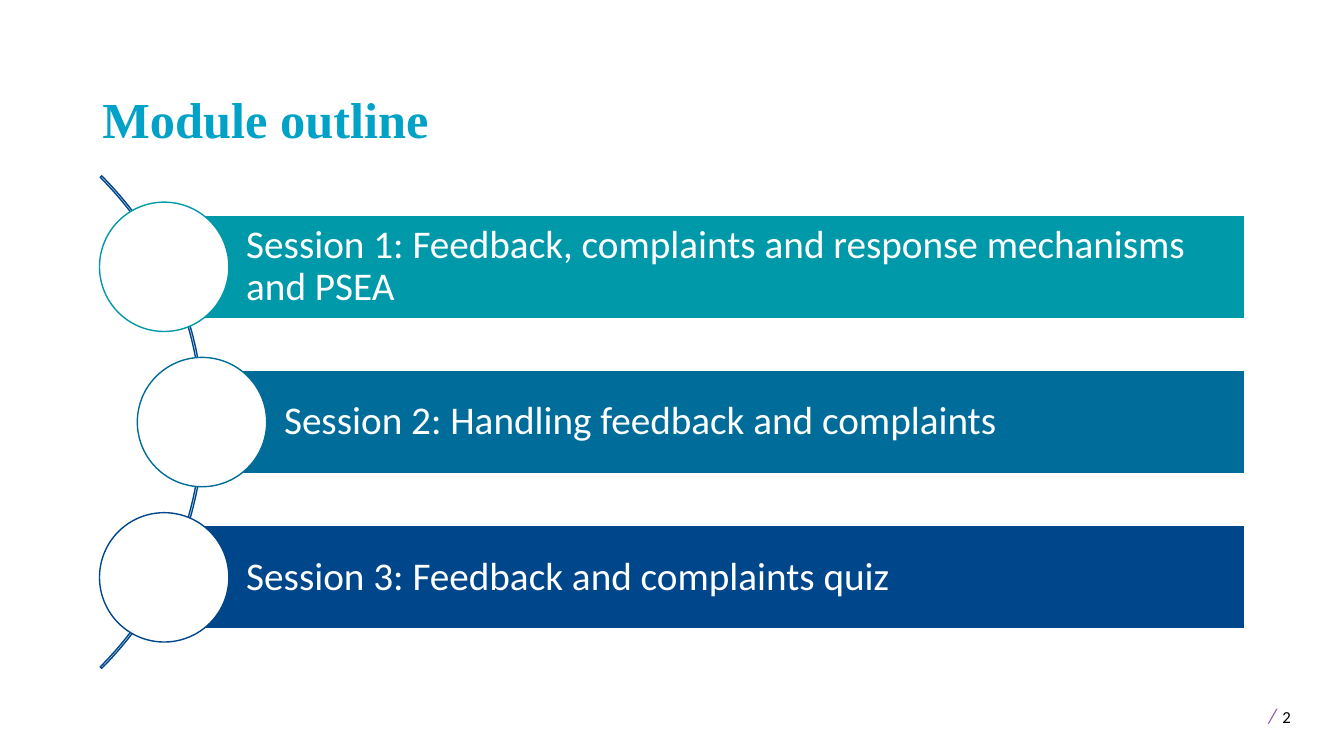
from pptx import Presentation
from pptx.dml.color import RGBColor
from pptx.enum.shapes import MSO_SHAPE as Preset
from pptx.enum.text import MSO_ANCHOR as Anchor, PP_ALIGN as Align
from pptx.util import Pt

SESSIONS = [
    ("Session 1: Feedback, complaints and response mechanisms and PSEA", "0099A9", 117.3),
    ("Session 2: Handling feedback and complaints", "006C9A", 144.3),
    ("Session 3: Feedback and complaints quiz", "00468B", 117.3),
]
MIDDLE_Y = 301.5
PITCH = 110.9
BAR_HEIGHT = 73.9
BAR_RIGHT = 888.8
CIRCLE_SIZE = 92.4
ARC_SIZE = 497.5


def colour(value):
    return RGBColor.from_string(value)


def add_shape(page, preset, left, top, width, height, line, fill=None):
    shape = page.shapes.add_shape(preset, Pt(left), Pt(top), Pt(width), Pt(height))
    shape.shadow.inherit = False
    if fill:
        shape.fill.solid()
        shape.fill.fore_color.rgb = colour(fill)
    else:
        shape.fill.background()
    shape.line.color.rgb = colour(line)
    shape.line.width = Pt(1)
    return shape


def add_span(para, text, size, hue, font="Calibri", bold=False, italic=False):
    span = para.add_run()
    span.text = text
    span.font.name = font
    span.font.size = Pt(size)
    span.font.bold = bold
    span.font.italic = italic
    span.font.color.rgb = colour(hue)


def set_frame(frame, anchor, left, other):
    frame.word_wrap = True
    frame.vertical_anchor = anchor
    frame.margin_left = Pt(left)
    frame.margin_top = frame.margin_right = frame.margin_bottom = Pt(other)


def add_title(page, text):
    title = page.shapes.title
    title.left, title.top, title.width, title.height = Pt(66), Pt(28.8), Pt(828), Pt(81.4)
    set_frame(title.text_frame, Anchor.BOTTOM, 7.2, 3.6)
    para = title.text_frame.paragraphs[0]
    para.alignment = Align.LEFT
    para.line_spacing = 0.9
    add_span(para, text, 36, "00A2C7", "Times New Roman", bold=True)


def add_arc(page):
    arc = add_shape(page, Preset.BLOCK_ARC, -352, MIDDLE_Y - ARC_SIZE / 2,
                    ARC_SIZE, ARC_SIZE, "00468B")
    # Start and end angles in units of 5/3 degree, then the relative thickness
    for index, value in enumerate((189, 27, 0.003)):
        arc.adjustments[index] = value


def add_session(page, text, hue, left, middle):
    """Add a bar that starts at the centre of its circle."""
    bar = add_shape(page, Preset.RECTANGLE, left, middle - BAR_HEIGHT / 2,
                    BAR_RIGHT - left, BAR_HEIGHT, "FFFFFF", hue)
    set_frame(bar.text_frame, Anchor.MIDDLE, 58.6, 5.6)
    para = bar.text_frame.paragraphs[0]
    para.alignment = Align.LEFT
    para.line_spacing = 0.9
    add_span(para, text, 28, "FFFFFF")
    add_shape(page, Preset.OVAL, left - CIRCLE_SIZE / 2, middle - CIRCLE_SIZE / 2,
              CIRCLE_SIZE, CIRCLE_SIZE, hue, "FFFFFF")


def add_page_number(page, number):
    box = page.shapes.add_textbox(Pt(895), Pt(495.4), Pt(62.6), Pt(28.8))
    set_frame(box.text_frame, Anchor.TOP, 11.2, 3.6)
    para = box.text_frame.paragraphs[0]
    add_span(para, "/", 15, "9053A1", italic=True)
    add_span(para, " ", 18, "000000")
    add_span(para, number, 12, "000000")


def main():
    deck = Presentation()
    deck.slide_width, deck.slide_height = Pt(960), Pt(540)
    page = deck.slides.add_slide(deck.slide_layouts[5])
    add_title(page, "Module outline")
    add_arc(page)
    for index, (text, hue, left) in enumerate(SESSIONS):
        add_session(page, text, hue, left, MIDDLE_Y + (index - 1) * PITCH)
    add_page_number(page, "2")
    deck.save("out.pptx")


if __name__ == "__main__":
    main()
